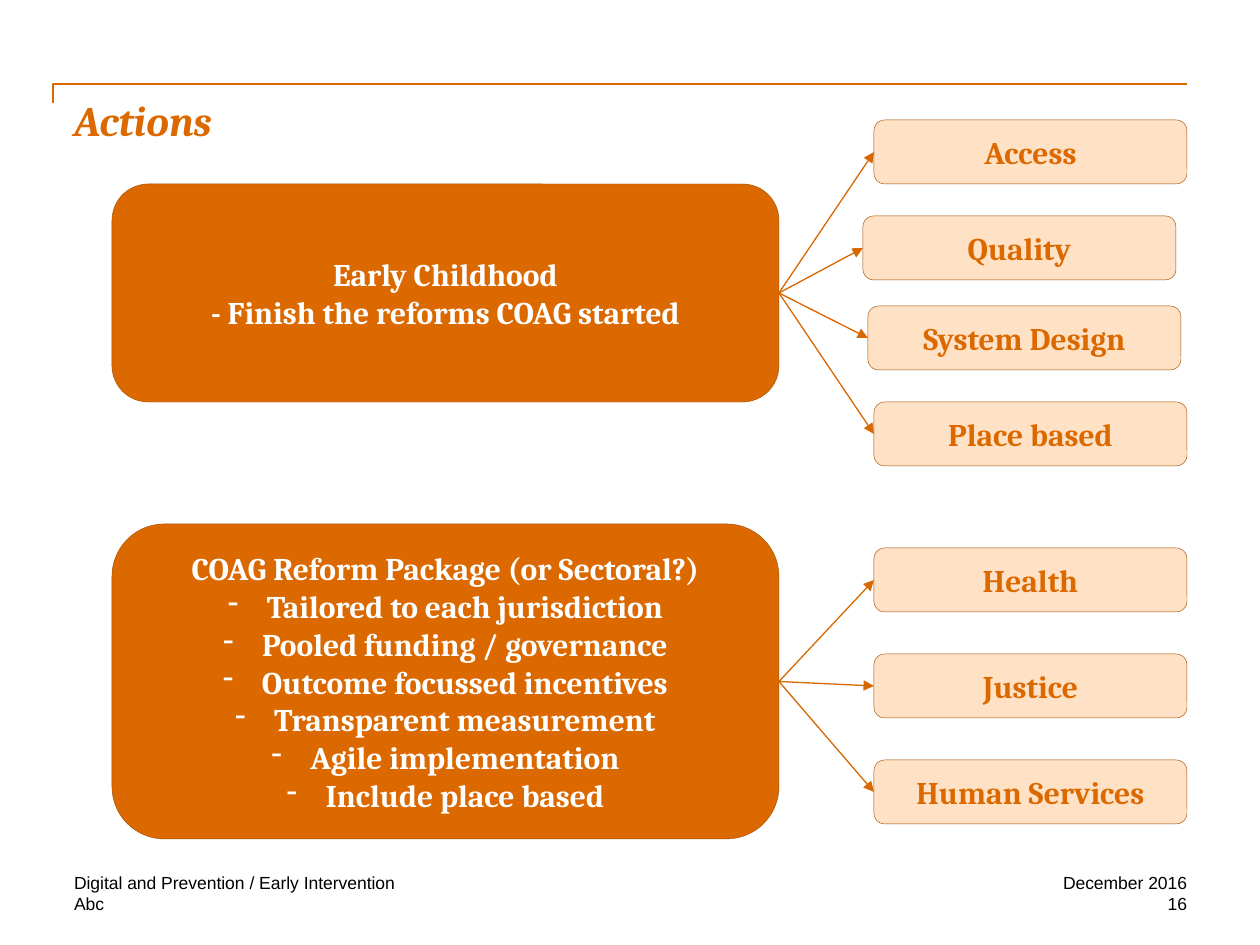
from dataclasses import dataclass

from lxml.etree import SubElement
from pptx import Presentation
from pptx.dml.color import RGBColor
from pptx.enum.shapes import MSO_CONNECTOR, MSO_SHAPE
from pptx.enum.text import MSO_ANCHOR, PP_ALIGN
from pptx.oxml.ns import qn
from pptx.util import Emu, Pt

EMU_PER_PX = 914400 / 126
RIGHT, LEFT = 3, 1  # connection sites of a rectangle


@dataclass(frozen=True)
class Theme:
    orange: RGBColor = RGBColor(0xDC, 0x69, 0x00)
    arrow: RGBColor = RGBColor(0xD7, 0x67, 0x00)
    outline: RGBColor = RGBColor(0xA3, 0x4E, 0x00)
    pale: RGBColor = RGBColor(0xFF, 0xE1, 0xC5)
    white: RGBColor = RGBColor(0xFF, 0xFF, 0xFF)
    black: RGBColor = RGBColor(0x00, 0x00, 0x00)
    heading_font: str = "Cambria"
    footer_font: str = "Arial"
    title_size: int = 24
    label_size: int = 18
    footer_size: int = 10


THEME = Theme()


def px(length):
    return Emu(round(length * EMU_PER_PX))


def set_font(para, name, size, color, bold=False, italic=False):
    font = para.font
    font.name, font.size, font.bold, font.italic = name, Pt(size), bold, italic
    font.color.rgb = color


def clear_margins(frame):
    frame.margin_left = frame.margin_right = frame.margin_top = frame.margin_bottom = 0
    frame.word_wrap = True


def add_dash(para):
    """Give a paragraph a hanging dash bullet."""
    properties = para._p.get_or_add_pPr()
    properties.set("marL", str(px(39)))
    properties.set("indent", str(-px(39)))
    SubElement(properties, qn("a:buChar")).set("char", "-")


def add_header(page, left, top, width):
    """Bent rule with the title below it."""
    builder = page.shapes.build_freeform(px(left), px(top + 19))
    builder.add_line_segments(
        [(px(left), px(top)), (px(left + width), px(top))], close=False)
    rule = builder.convert_to_shape()
    rule.shadow.inherit = False
    rule.fill.background()
    rule.line.color.rgb = THEME.orange
    rule.line.width = Pt(1)

    title = page.shapes.title
    title.left, title.top = px(left + 21), px(top + 10)
    title.width, title.height = px(width - 21), px(126)
    frame = title.text_frame
    clear_margins(frame)
    frame.vertical_anchor = MSO_ANCHOR.TOP
    frame.text = "Actions"
    para = frame.paragraphs[0]
    para.alignment = PP_ALIGN.LEFT
    set_font(para, THEME.heading_font, THEME.title_size, THEME.orange, True, True)


def add_box(page, bounds, lines, fill, color, dashed_from=None):
    """Rounded box; lines from index dashed_from on get a dash."""
    box = page.shapes.add_shape(MSO_SHAPE.ROUNDED_RECTANGLE, *map(px, bounds))
    box.shadow.inherit = False
    box.fill.solid()
    box.fill.fore_color.rgb = fill
    box.line.color.rgb = THEME.outline
    box.line.width = Pt(0.25)
    frame = box.text_frame
    frame.vertical_anchor = MSO_ANCHOR.MIDDLE
    frame.text = "\n".join(lines)
    for index, para in enumerate(frame.paragraphs):
        para.alignment = PP_ALIGN.CENTER
        set_font(para, THEME.heading_font, THEME.label_size, color, bold=True)
        if dashed_from is not None and index >= dashed_from:
            add_dash(para)
    return box


def add_arrow(page, source, target):
    arrow = page.shapes.add_connector(MSO_CONNECTOR.STRAIGHT, 0, 0, 0, 0)
    arrow.begin_connect(source, RIGHT)
    arrow.end_connect(target, LEFT)
    arrow.line.color.rgb = THEME.arrow
    arrow.line.width = Pt(0.75)
    SubElement(arrow.line._get_or_add_ln(), qn("a:tailEnd")).set("type", "triangle")
    SubElement(arrow._element.spPr, qn("a:effectLst"))


def add_action(page, left, top, height, lines, branches, dashed_from=None):
    """Action box with arrows to its branches, each (label, x, y) from its corner."""
    action = add_box(page, (left, top, 667, height), lines,
                     THEME.orange, THEME.white, dashed_from)
    for label, x, y in branches:
        branch = add_box(page, (left + x, top + y, 313, 64), [label],
                         THEME.pale, THEME.orange)
        add_arrow(page, action, branch)


def add_footer(page, left, top, width):
    """Two footer rows, each with a left and a right text."""
    rows = [("Digital and Prevention / Early Intervention", "December 2016"),
            ("Abc", "16")]
    right_width = 210
    for row, (left_text, right_text) in enumerate(rows):
        cells = [(left_text, left, width - right_width, PP_ALIGN.LEFT),
                 (right_text, left + width - right_width, right_width, PP_ALIGN.RIGHT)]
        for text, x, cell_width, alignment in cells:
            box = page.shapes.add_textbox(
                px(x), px(top + 21 * row), px(cell_width), px(21))
            clear_margins(box.text_frame)
            box.text_frame.text = text
            para = box.text_frame.paragraphs[0]
            para.alignment = alignment
            set_font(para, THEME.footer_font, THEME.footer_size, THEME.black)


def main():
    deck = Presentation()
    deck.slide_width, deck.slide_height = px(1260), px(945)
    page = deck.slides.add_slide(deck.slide_layouts[5])

    add_header(page, 53, 84, 1134)
    add_action(
        page, 112, 184, 218,
        ["Early Childhood", "- Finish the reforms COAG started"],
        [("Access", 762, -64), ("Quality", 751, 32),
         ("System Design", 756, 122), ("Place based", 762, 218)])
    sectors = ["Health", "Justice", "Human Services"]
    add_action(
        page, 112, 524, 315,
        ["COAG Reform Package (or Sectoral?)",
         "Tailored to each jurisdiction",
         "Pooled funding / governance",
         "Outcome focussed incentives",
         "Transparent measurement",
         "Agile implementation",
         "Include place based"],
        [(label, 762, 24 + 106 * row) for row, label in enumerate(sectors)],
        dashed_from=1)
    add_footer(page, 74, 872, 1113)

    deck.save("out.pptx")


if __name__ == "__main__":
    main()
